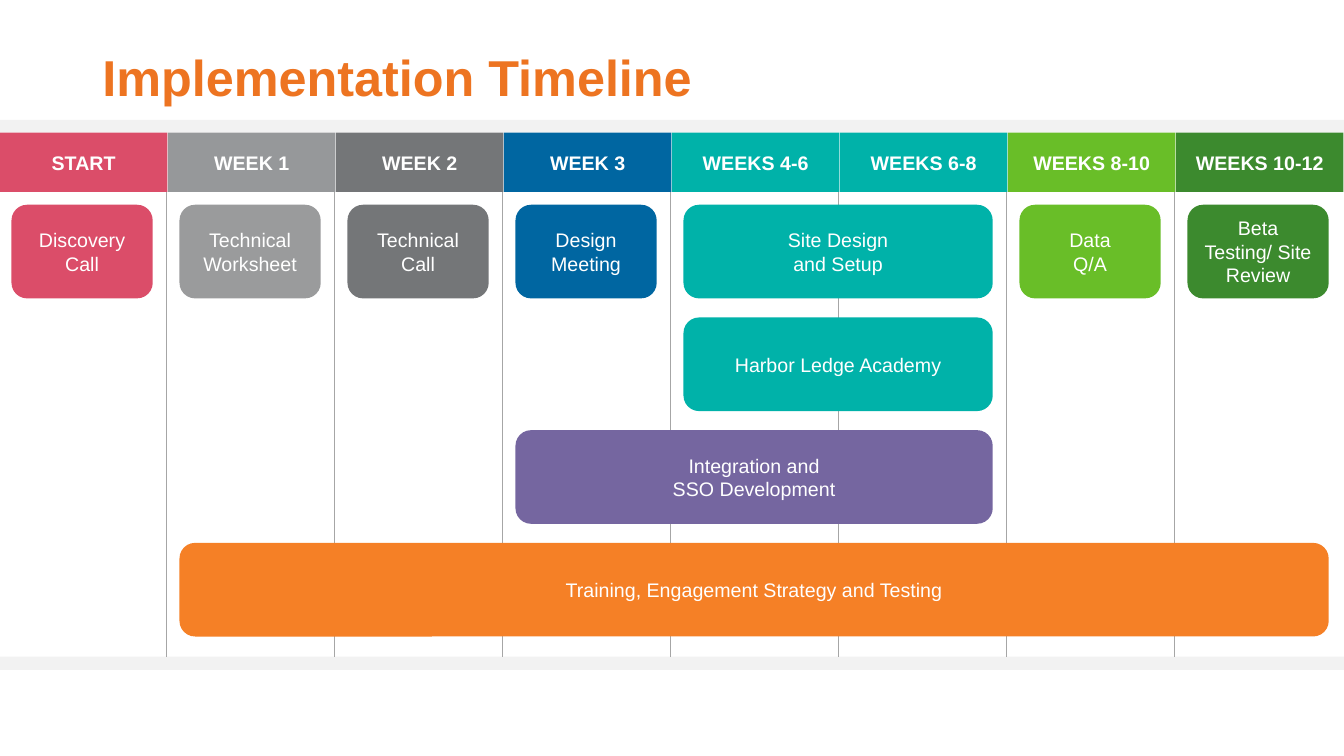
"""Build the implementation timeline slide."""
from typing import NamedTuple

from lxml.etree import SubElement
from pptx import Presentation
from pptx.dml.color import RGBColor
from pptx.enum.shapes import MSO_CONNECTOR, MSO_SHAPE
from pptx.enum.text import MSO_ANCHOR, PP_ALIGN
from pptx.oxml.ns import qn
from pptx.util import Cm, Pt

WIDTH = 33.87
STEP = WIDTH / 8
TOP = 3.34
HEAD = 1.5
BASE = 16.55
TEAL = "00B2A9"


class Week(NamedTuple):
    label: str
    fill: str


class Card(NamedTuple):
    label: str
    fill: str
    col: int
    row: int = 0
    span: int = 1


WEEKS = [
    Week("START", "DB4D69"),
    Week("WEEK 1", "96989A"),
    Week("WEEK 2", "747678"),
    Week("WEEK 3", "0066A1"),
    Week("WEEKS 4-6", TEAL),
    Week("WEEKS 6-8", TEAL),
    Week("WEEKS 8-10", "69BE28"),
    Week("WEEKS 10-12", "3C8A2E"),
]

CARDS = [
    Card("Discovery Call", "DB4D69", 0),
    Card("Technical Worksheet", "9A9B9C", 1),
    Card("Technical Call", "747678", 2),
    Card("Design Meeting", "0066A1", 3),
    Card("Data\vQ/A", "69BE28", 6),
    Card("Beta Testing/ Site Review", "3C8A2E", 7),
    Card("Site Design\nand Setup", TEAL, 4, span=2),
    Card("Harbor Ledge Academy", TEAL, 4, row=1, span=2),
    Card("Integration and\vSSO Development", "7566A0", 3, row=2, span=3),
    Card("Training, Engagement Strategy and Testing", "F58026", 1, row=3, span=7),
]


def paint(form, color: str) -> None:
    form.solid()
    form.fore_color.rgb = RGBColor.from_string(color)


def write(shape, text: str, *, size: float = 14, color: str = "FFFFFF",
          bold: bool = False, align=PP_ALIGN.CENTER,
          anchor=MSO_ANCHOR.MIDDLE, space: float = 1.0) -> None:
    frame = shape.text_frame
    frame.word_wrap = True
    frame.vertical_anchor = anchor
    frame.text = text
    for para in frame.paragraphs:
        para.alignment = align
        para.line_spacing = space
        para.font.name = "Arial"
        para.font.size = Pt(size)
        para.font.bold = bold
        paint(para.font.fill, color)


def block(slide, left: float, top: float, width: float, height: float,
          fill: str, kind=MSO_SHAPE.RECTANGLE):
    shape = slide.shapes.add_shape(kind, Cm(left), Cm(top), Cm(width), Cm(height))
    shape.shadow.inherit = False
    paint(shape.fill, fill)
    shape.line.fill.background()
    return shape


def rule(slide, left: float) -> None:
    line = slide.shapes.add_connector(
        MSO_CONNECTOR.STRAIGHT, Cm(left), Cm(TOP + HEAD), Cm(left), Cm(BASE))
    paint(line.line.fill, "A6A6A6")
    line.line.width = Pt(0.5)
    SubElement(line._element.spPr, qn("a:effectLst"))


def main() -> None:
    deck = Presentation()
    deck.slide_width, deck.slide_height = Cm(WIDTH), Cm(19.05)
    slide = deck.slides.add_slide(deck.slide_layouts[6])

    block(slide, 0, 3.02, WIDTH, 13.86, "F2F2F2")
    block(slide, 0, TOP, WIDTH, BASE - TOP, "FFFFFF")
    title = slide.shapes.add_textbox(Cm(2.33), Cm(1.09), Cm(29.21), Cm(1.75))
    write(title, "Implementation Timeline", size=36, color="ED7421", bold=True,
          align=PP_ALIGN.LEFT, anchor=MSO_ANCHOR.BOTTOM, space=0.9)

    for col, week in enumerate(WEEKS):
        head = block(slide, col * STEP, TOP, 4.22, HEAD, week.fill)
        write(head, week.label, bold=True)
    for col in range(1, len(WEEKS)):
        rule(slide, col * STEP - 0.03)
    for card in CARDS:
        shape = block(slide, 0.29 + card.col * STEP, 5.16 + card.row * 2.84,
                      3.56 + (card.span - 1) * STEP, 2.36, card.fill,
                      MSO_SHAPE.ROUNDED_RECTANGLE)
        write(shape, card.label)

    deck.save("out.pptx")


if __name__ == "__main__":
    main()
